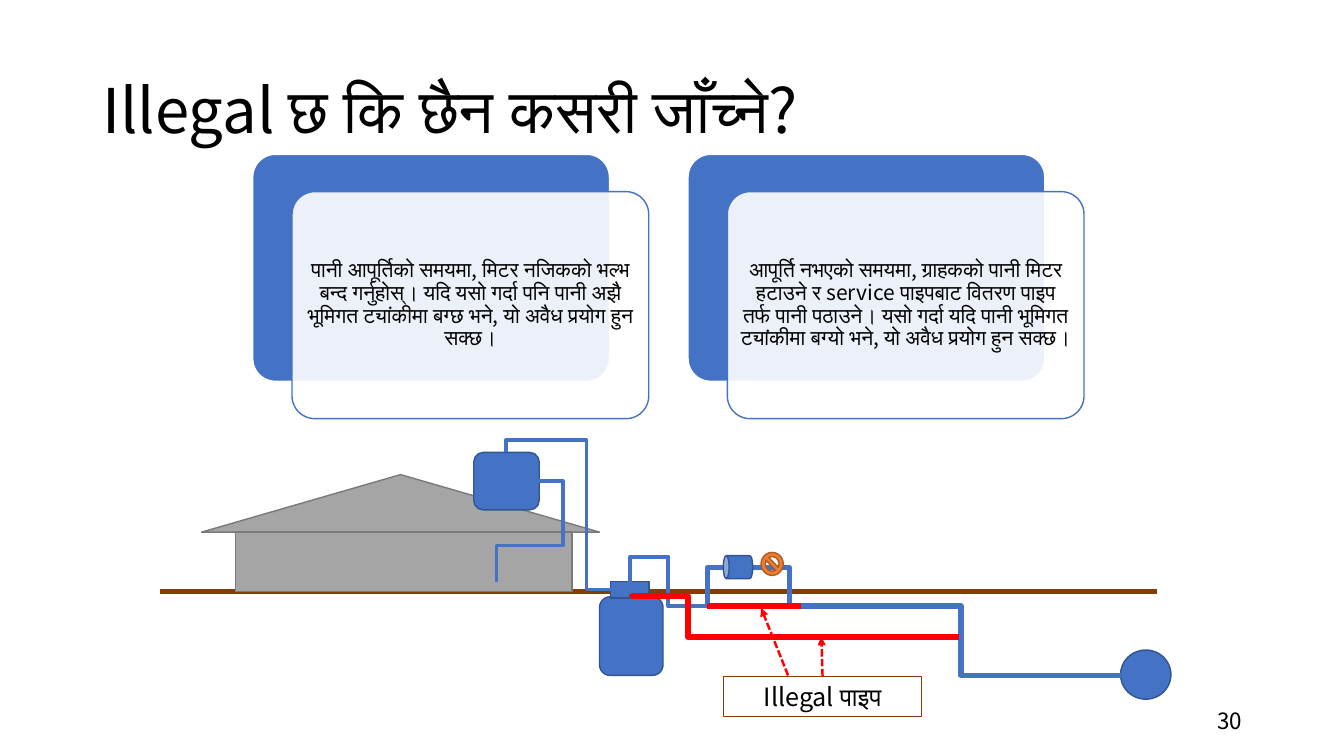
from dataclasses import dataclass
from typing import Any

from lxml import etree
from pptx import Presentation
from pptx.dml.color import RGBColor
from pptx.enum.dml import MSO_LINE
from pptx.enum.shapes import MSO_CONNECTOR, MSO_SHAPE
from pptx.enum.text import MSO_ANCHOR, PP_ALIGN
from pptx.oxml.ns import qn
from pptx.util import Cm, Pt

ROUNDED, RECT, OVAL = MSO_SHAPE.ROUNDED_RECTANGLE, MSO_SHAPE.RECTANGLE, MSO_SHAPE.OVAL
TRIANGLE, CAN, NO_SYMBOL = MSO_SHAPE.ISOSCELES_TRIANGLE, MSO_SHAPE.CAN, MSO_SHAPE.NO_SYMBOL
STRAIGHT, ELBOW = MSO_CONNECTOR.STRAIGHT, MSO_CONNECTOR.ELBOW
SHORT_DASH = MSO_LINE.SQUARE_DOT
LEFT, CENTER, RIGHT = PP_ALIGN.LEFT, PP_ALIGN.CENTER, PP_ALIGN.RIGHT
MIDDLE, TOP = MSO_ANCHOR.MIDDLE, MSO_ANCHOR.TOP
TOP_SIDE = 0


@dataclass(frozen=True)
class Theme:
    font: str = "Noto Sans CJK JP"
    text: str = "000000"
    white: str = "FFFFFF"
    water: str = "4472C4"
    water_edge: str = "325491"
    house: str = "A5A5A5"
    house_edge: str = "7A7A7A"
    ground: str = "843C0B"
    illegal: str = "FF0000"
    valve: str = "ED7D31"
    valve_edge: str = "AF5C24"
    title_size: float = 44
    label_size: float = 18
    number_size: float = 16
    card_size: float = 15


THEME = Theme()


@dataclass(frozen=True)
class Part:
    """A filled outline; box is left, top, width, height in centimetres."""
    kind: Any
    box: tuple[float, float, float, float]
    fill: str | None
    edge: str
    edge_width: float = 1
    rotation: float = 0
    corner: float | None = None


@dataclass(frozen=True)
class Pipe:
    """An elbow pipe; bends are the turning points as shares of its width and height."""
    start: tuple[float, float]
    end: tuple[float, float]
    width: float
    bends: tuple[float, ...] = (0.5,)
    color: str = THEME.water


CARD_TEXTS = (
    "पानी आपूर्तिको समयमा, मिटर नजिकको भल्भ बन्द गर्नुहोस्। यदि यसो गर्दा पनि पानी अझै "
    "भूमिगत ट्यांकीमा बग्छ भने, यो अवैध प्रयोग हुन सक्छ।",
    "आपूर्ति नभएको समयमा, ग्राहकको पानी मिटर हटाउने र service पाइपबाट वितरण पाइप "
    "तर्फ पानी पठाउने। यसो गर्दा यदि पानी भूमिगत ट्यांकीमा बग्यो भने, यो अवैध प्रयोग हुन सक्छ।",
)
CARD_LEFT, CARD_TOP, CARD_STEP = 6.37, 3.89, 10.97
CARD_SIZE = (8.99, 5.72)
CARD_SHIFT = (0.99, 0.94)

HOUSE_AND_TANKS = (
    Part(TRIANGLE, (5.08, 11.96, 10.03, 1.45), THEME.house, THEME.house_edge),
    Part(RECT, (5.94, 13.41, 8.48, 1.5), THEME.house, THEME.house_edge),
    Part(ROUNDED, (15.11, 15.04, 1.6, 1.98), THEME.water, THEME.water_edge),
    Part(RECT, (15.39, 14.66, 0.97, 0.41), THEME.water, THEME.water_edge),
    Part(ROUNDED, (11.94, 11.4, 1.65, 1.45), THEME.water, THEME.water_edge),
)
WATER_MAIN = Part(OVAL, (28.24, 16.38, 1.27, 1.24), THEME.water, THEME.water_edge)
METER_AND_VALVE = (
    Part(CAN, (18.31, 13.92, 0.58, 0.74), THEME.water, THEME.water_edge, rotation=270),
    Part(NO_SYMBOL, (19.18, 13.92, 0.56, 0.58), THEME.valve, THEME.valve_edge),
)
ILLEGAL_LABEL = Part(RECT, (18.24, 17.04, 4.98, 1.02), None, THEME.ground, 0.75)

PIPES = (
    Pipe((28.24, 17.02), (20.19, 15.27), 4),
    Pipe((20.19, 15.27), (18.92, 14.3), 3, (0.23,)),
    Pipe((18.34, 14.3), (17.32, 15.27), 3),
    Pipe((17.32, 15.27), (15.88, 14.66), 3, (0.33, 2.03)),
    Pipe((15.39, 14.86), (12.75, 11.4), 2.5, (0.23, 1.09)),
    Pipe((13.56, 12.12), (12.52, 14.66), 2.5, (-0.6, 0.64)),
    Pipe((20.19, 15.27), (17.81, 15.27), 4, color=THEME.illegal),
    Pipe((24.18, 16.05), (15.93, 15.04), 4, (0.83, 1.02), THEME.illegal),
)


def rgb(code: str) -> RGBColor:
    return RGBColor.from_string(code)


def apply(target: Any, formats: dict[str, Any]) -> None:
    for name, value in formats.items():
        setattr(target, name, value)


def write(shape: Any, text: str, size: float, align: Any, anchor: Any = MIDDLE,
          spacing: float = 1.0, inset: float | None = None) -> None:
    frame = shape.text_frame
    apply(frame, {"text": text, "word_wrap": True, "vertical_anchor": anchor})
    if inset is not None:
        sides = ("margin_left", "margin_top", "margin_right", "margin_bottom")
        apply(frame, dict.fromkeys(sides, Cm(inset)))
    paragraph = frame.paragraphs[0]
    apply(paragraph, {"alignment": align, "line_spacing": spacing})
    apply(paragraph.font, {"name": THEME.font, "size": Pt(size)})
    paragraph.font.color.rgb = rgb(THEME.text)


def draw_part(slide: Any, part: Part) -> Any:
    shape = slide.shapes.add_shape(part.kind, *map(Cm, part.box))
    shape.shadow.inherit = False
    shape.rotation = part.rotation
    if part.corner is not None:
        shape.adjustments[0] = part.corner
    if part.fill is None:
        shape.fill.background()
    else:
        shape.fill.solid()
        shape.fill.fore_color.rgb = rgb(part.fill)
    shape.line.color.rgb = rgb(part.edge)
    shape.line.width = Pt(part.edge_width)
    return shape


def draw_line(slide: Any, kind: Any, start: tuple[float, float], end: tuple[float, float],
              color: str, width: float) -> Any:
    line = slide.shapes.add_connector(kind, *map(Cm, start + end))
    line.line.color.rgb = rgb(color)
    line.line.width = Pt(width)
    etree.SubElement(line._element.spPr, qn("a:effectLst"))
    return line


def draw_pipe(slide: Any, pipe: Pipe) -> None:
    line = draw_line(slide, ELBOW, pipe.start, pipe.end, pipe.color, pipe.width)
    geometry = line._element.spPr.find(qn("a:prstGeom"))
    geometry.set("prst", f"bentConnector{len(pipe.bends) + 2}")
    guides = geometry.find(qn("a:avLst"))
    for number, share in enumerate(pipe.bends, 1):
        etree.SubElement(guides, qn("a:gd"), name=f"adj{number}",
                         fmla=f"val {round(share * 100000)}")


def draw_arrow(slide: Any, start: tuple[float, float], end: tuple[float, float]) -> Any:
    arrow = draw_line(slide, STRAIGHT, start, end, THEME.illegal, 1.75)
    arrow.line.dash_style = SHORT_DASH
    etree.SubElement(arrow.line._get_or_add_ln(), qn("a:tailEnd"), type="triangle")
    return arrow


def draw_card(slide: Any, left: float, text: str) -> None:
    """Draw a solid back panel and, shifted over it, a translucent panel with the text."""
    draw_part(slide, Part(ROUNDED, (left, CARD_TOP, *CARD_SIZE), THEME.water, THEME.white,
                          corner=0.1))
    shift_x, shift_y = CARD_SHIFT
    front = draw_part(slide, Part(ROUNDED, (left + shift_x, CARD_TOP + shift_y, *CARD_SIZE),
                                  THEME.white, THEME.water, corner=0.1))
    color = front._element.spPr.find(qn("a:solidFill")).find(qn("a:srgbClr"))
    etree.SubElement(color, qn("a:alpha"), val="90000")
    write(front, text, THEME.card_size, CENTER, spacing=0.9, inset=0.15)


def main() -> None:
    deck = Presentation()
    apply(deck, {"slide_width": Cm(33.87), "slide_height": Cm(19.05)})
    slide = deck.slides.add_slide(deck.slide_layouts[6])

    title = slide.shapes.add_textbox(Cm(2.33), Cm(1.01), Cm(29.21), Cm(3.68))
    write(title, "Illegal छ कि छैन कसरी जाँच्ने?", THEME.title_size, LEFT, spacing=0.9)
    for column, text in enumerate(CARD_TEXTS):
        draw_card(slide, CARD_LEFT + column * CARD_STEP, text)

    draw_part(slide, WATER_MAIN)
    draw_line(slide, STRAIGHT, (4.04, 14.91), (29.16, 14.91), THEME.ground, 3.5)
    for part in HOUSE_AND_TANKS:
        draw_part(slide, part)
    for pipe in PIPES:
        draw_pipe(slide, pipe)
    for part in METER_AND_VALVE:
        draw_part(slide, part)

    illegal_label = draw_part(slide, ILLEGAL_LABEL)
    write(illegal_label, "Illegal पाइप", THEME.label_size, CENTER, TOP)
    bypass_arrow = draw_arrow(slide, (20.73, 17.04), (20.7, 16.05))
    bypass_arrow.begin_connect(illegal_label, TOP_SIDE)
    draw_arrow(slide, (19.86, 17.02), (19.18, 15.32))

    page_number = slide.shapes.add_textbox(Cm(23.93), Cm(17.65), Cm(7.62), Cm(1.02))
    write(page_number, "30", THEME.number_size, RIGHT)
    deck.save("out.pptx")


if __name__ == "__main__":
    main()
